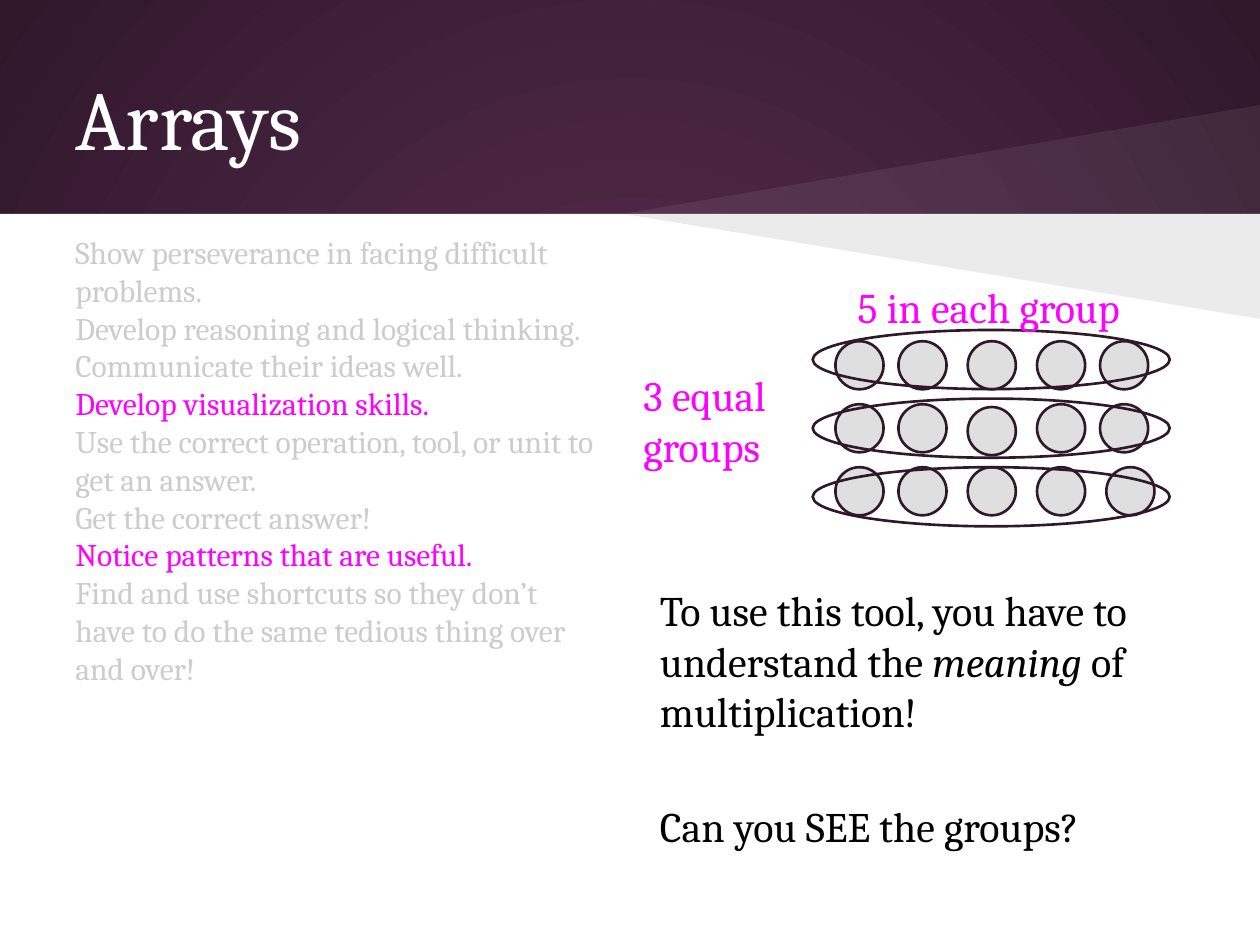
from lxml import etree
from pptx import Presentation
from pptx.dml.color import RGBColor
from pptx.enum import shapes, text
from pptx.oxml import ns
from pptx.util import Pt

COLORS = {
    "plum": "592D50", "dark": "30182B", "white": "FFFFFF", "black": "000000",
    "muted": "CCCCCC", "accent": "FF00FF", "dot": "DFDFDF",
}
FONT = "Cambria"
GOALS = [
    ("Show perseverance in facing difficult problems.", "muted"),
    ("Develop reasoning and logical thinking.", "muted"),
    ("Communicate their ideas well.", "muted"),
    ("Develop visualization skills.", "accent"),
    ("Use the correct operation, tool, or unit to get an answer.", "muted"),
    ("Get the correct answer!", "muted"),
    ("Notice patterns that are useful.", "accent"),
    ("Find and use shortcuts so they don’t have to do the same tedious thing over and over!", "muted"),
]
DOT_COLUMNS = [477.4, 513.4, 553, 592.6, 628.6]
DOT_SHIFTS = {(1, 2): (0, 1.6), (2, 4): (3.6, 0)}


def rgb(name):
    return RGBColor.from_string(COLORS[name])


def set_background(s):
    fill = s.background.fill
    fill.gradient()
    for stop, name, position in zip(fill.gradient_stops, ("plum", "dark"), (0, 1)):
        stop.color.rgb = rgb(name)
        stop.position = position
    grad = s.background._cSld.find(".//" + ns.qn("a:gradFill"))
    grad.remove(grad.find(ns.qn("a:lin")))
    radial = etree.SubElement(grad, ns.qn("a:path"), {"path": "circle"})
    etree.SubElement(radial, ns.qn("a:fillToRect"), dict.fromkeys("ltrb", "50000"))


def style_shape(sp, fill=None, line=None):
    sp.shadow.inherit = False
    if fill:
        sp.fill.solid()
        sp.fill.fore_color.rgb = rgb(fill)
    else:
        sp.fill.background()
    if line:
        sp.line.color.rgb = rgb(line)
        sp.line.width = Pt(1.5)
    else:
        sp.line.fill.background()


def add_shape(s, kind, box, **style):
    sp = s.shapes.add_shape(kind, *map(Pt, box))
    style_shape(sp, **style)


def add_beam(s, points, color, opacity):
    start, *rest = [(Pt(x), Pt(y)) for x, y in points]
    builder = s.shapes.build_freeform(*start)
    builder.add_line_segments(rest, close=True)
    sp = builder.convert_to_shape()
    style_shape(sp, fill=color)
    clr = sp.fill._xPr.find(".//" + ns.qn("a:srgbClr"))
    etree.SubElement(clr, ns.qn("a:alpha"), val=str(opacity * 1000))


def format_frame(tf, anchor):
    frame_format = {
        "word_wrap": True, "auto_size": text.MSO_AUTO_SIZE.NONE, "vertical_anchor": anchor,
        "margin_left": Pt(7.2), "margin_right": Pt(7.2),
        "margin_top": Pt(7.2), "margin_bottom": Pt(7.2),
    }
    for name, value in frame_format.items():
        setattr(tf, name, value)


def add_run(p, content, size, color, italic=False):
    r = p.add_run()
    r.text = content
    for name, value in {"name": FONT, "size": Pt(size), "italic": italic}.items():
        setattr(r.font, name, value)
    r.font.color.rgb = rgb(color)


def add_title(s, content, box):
    sp = s.shapes.title
    for name, value in zip(("left", "top", "width", "height"), box):
        setattr(sp, name, Pt(value))
    format_frame(sp.text_frame, text.MSO_ANCHOR.MIDDLE)
    p = sp.text_frame.paragraphs[0]
    p.alignment = text.PP_ALIGN.LEFT
    add_run(p, content, 48, "white")


def add_text(s, box, paragraphs, size):
    tf = s.shapes.add_textbox(*map(Pt, box)).text_frame
    format_frame(tf, text.MSO_ANCHOR.TOP)
    for i, runs in enumerate(paragraphs):
        p = tf.add_paragraph() if i else tf.paragraphs[0]
        for content, color, *italic in runs:
            add_run(p, content, size, color, *italic)


def add_array(s):
    oval = shapes.MSO_SHAPE.OVAL
    for row in range(3):
        for col, x in enumerate(DOT_COLUMNS):
            dx, dy = DOT_SHIFTS.get((row, col), (0, 0))
            box = (x + dx, 195 + 36 * row + dy, 27.5, 27.5)
            add_shape(s, oval, box, fill="dot", line="dark")
    for row in range(3):
        add_shape(s, oval, (464.4, 188.6 + 39.2 * row, 204, 33.8), line="dark")


def main():
    prs = Presentation()
    prs.slide_width, prs.slide_height = Pt(720), Pt(540)
    s = prs.slides.add_slide(prs.slide_layouts[5])
    set_background(s)
    add_shape(s, shapes.MSO_SHAPE.RECTANGLE, (0, 122.2, 720, 417.8), fill="white")
    for edge, color, opacity in ((182.2, "black", 8), (60, "white", 7)):
        add_beam(s, [(720, 122.2), (356.4, 122.2), (720, edge)], color, opacity)
    title = s.shapes.title._element
    title.getparent().append(title)
    add_title(s, "Arrays", (36, 21.6, 648, 90))
    add_text(s, (36, 126, 314.6, 391), [[goal] for goal in GOALS], 18)
    add_text(s, (370, 327, 314.6, 118), [[
        ("To use this tool, you have to understand the ", "black"),
        ("meaning", "black", True),
        (" of multiplication!", "black"),
    ]], 24)
    add_array(s)
    add_text(s, (483, 153.4, 186, 36), [[("5 in each group", "accent")]], 24)
    add_text(s, (360.6, 204, 94.4, 82), [[("3 equal groups", "accent")]], 24)
    add_text(s, (370, 450, 314.6, 58.4), [[("Can you SEE the groups?", "black")]], 24)
    prs.save("out.pptx")


if __name__ == "__main__":
    main()
